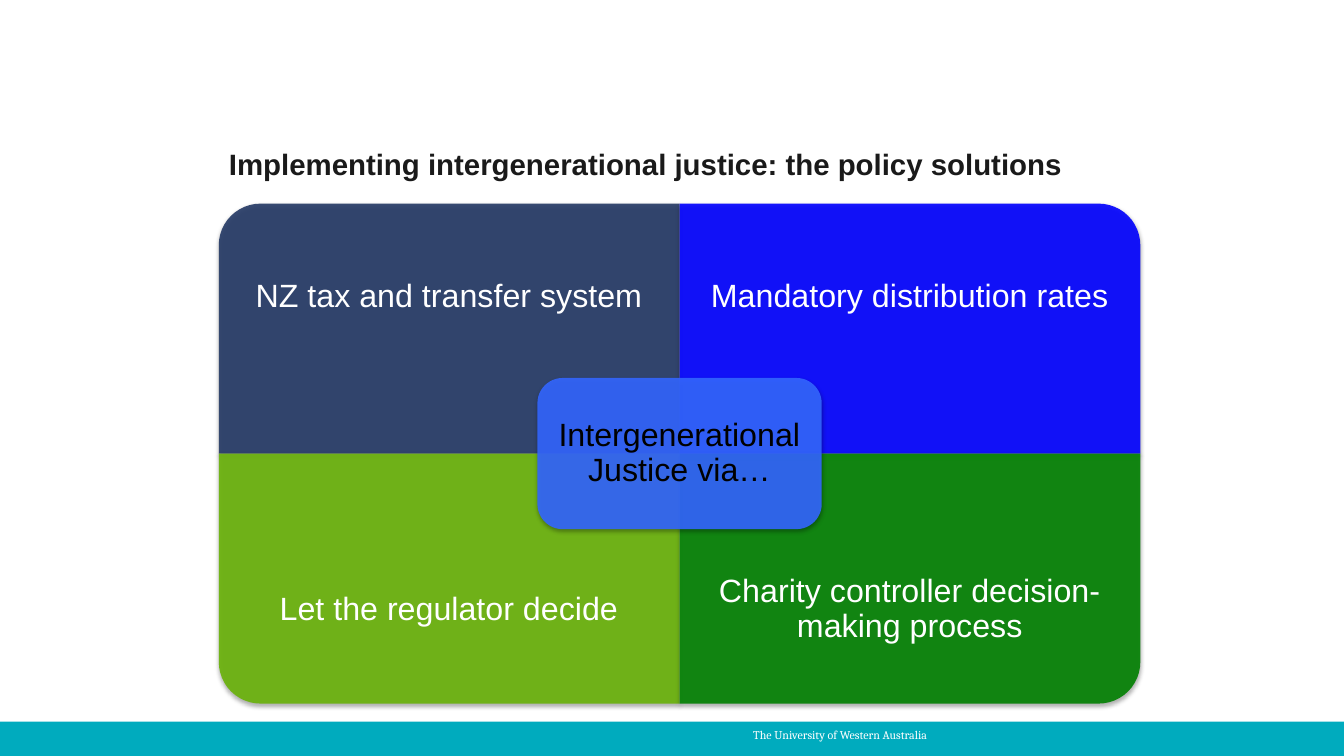
import pptx
import pptx.util
import pptx.dml.color
import pptx.enum.shapes
import pptx.enum.text
import pptx.oxml
import pptx.oxml.ns

Inches, Pt = pptx.util.Inches, pptx.util.Pt
RGBColor = pptx.dml.color.RGBColor
SHAPE = pptx.enum.shapes.MSO_SHAPE
ALIGN = pptx.enum.text.PP_ALIGN
ANCHOR = pptx.enum.text.MSO_ANCHOR

TEAL = RGBColor(0x00, 0xAB, 0xBE)
NAVY = RGBColor(0x24, 0x39, 0x65)
BLUE = RGBColor(0x00, 0x00, 0xFF)
LIME = RGBColor(0x69, 0xB2, 0x08)
GREEN = RGBColor(0x00, 0x80, 0x00)
SKY = RGBColor(0x33, 0x66, 0xFF)
INK = RGBColor(0x1A, 0x1A, 0x1A)
BLACK = RGBColor(0x00, 0x00, 0x00)
WHITE = RGBColor(0xFF, 0xFF, 0xFF)

TITLE = "Implementing intergenerational justice: the policy solutions"
FOOTER = "The University of Western Australia"
HUB = "Intergenerational Justice via…"
# text, column, row, fill, rotation that turns the round corner outwards
QUADRANTS = [
    ("NZ tax and transfer system", 0, 0, NAVY, 270),
    ("Mandatory distribution rates", 1, 0, BLUE, 0),
    ("Let the regulator decide", 0, 1, LIME, 180),
    ("Charity controller decision-making process", 1, 1, GREEN, 90),
]

WIDTH, HEIGHT = 13.33, 7.5
LEFT, TOP = 2.17, 2.02
QUAD_W, QUAD_H = 4.57, 2.48
LABEL_H = QUAD_H * 0.75
HUB_W, HUB_H = 2.82, 1.5
HUB_PAD = 0.07
BAR_H = 0.34


def box(x, y, w, h):
    return [Inches(v) for v in (x, y, w, h)]


def write(tf, text, size, color, font="Arial", bold=False, align=ALIGN.LEFT,
          inset=0.1, anchor=ANCHOR.MIDDLE):
    tf.word_wrap = True
    tf.auto_size = pptx.enum.text.MSO_AUTO_SIZE.NONE
    tf.vertical_anchor = anchor
    tf.margin_left = tf.margin_right = Inches(inset)
    tf.margin_top = tf.margin_bottom = Inches(inset)
    p = tf.paragraphs[0]
    p.alignment = align
    r = p.add_run()
    r.text = text
    r.font.size, r.font.name, r.font.bold = Pt(size), font, bold
    r.font.color.rgb = color
    return p


def add_tile(s, kind, color, frame):
    """Add a slightly transparent tile with a soft shadow below it."""
    sp = s.shapes.add_shape(kind, *box(*frame))
    sp.fill.solid()
    sp.fill.fore_color.rgb = color
    sp.line.fill.background()
    ns = pptx.oxml.ns.nsdecls("a")
    fill_color = sp._element.spPr.find(".//" + pptx.oxml.ns.qn("a:srgbClr"))
    fill_color.append(pptx.oxml.parse_xml(f'<a:alpha {ns} val="90000"/>'))
    sp._element.spPr.append(pptx.oxml.parse_xml(
        f'<a:effectLst {ns}><a:outerShdw blurRad="{Pt(3.1)}" dist="{Pt(1.8)}" '
        'dir="5400000" rotWithShape="0"><a:srgbClr val="000000">'
        '<a:alpha val="35000"/></a:srgbClr></a:outerShdw></a:effectLst>'))
    return sp


def add_label(s, text, color, frame, inset):
    tf = s.shapes.add_textbox(*box(*frame)).text_frame
    p = write(tf, text, 23, color, align=ALIGN.CENTER, inset=inset)
    p.line_spacing = 0.9


def add_quadrant(s, text, col, row, color, rotation):
    x, y = LEFT + col * QUAD_W, TOP + row * QUAD_H
    w, h = (QUAD_H, QUAD_W) if rotation % 180 else (QUAD_W, QUAD_H)
    frame = (x + (QUAD_W - w) / 2, y + (QUAD_H - h) / 2, w, h)
    add_tile(s, SHAPE.ROUND_1_RECTANGLE, color, frame).rotation = rotation
    label_y = y + row * (QUAD_H - LABEL_H)
    add_label(s, text, WHITE, (x, label_y, QUAD_W, LABEL_H), 0.18)


def add_hub(s):
    x, y = LEFT + QUAD_W - HUB_W / 2, TOP + QUAD_H - HUB_H / 2
    add_tile(s, SHAPE.ROUNDED_RECTANGLE, SKY, (x, y, HUB_W, HUB_H))
    inner = (x + HUB_PAD, y + HUB_PAD, HUB_W - 2 * HUB_PAD, HUB_H - 2 * HUB_PAD)
    add_label(s, HUB, BLACK, inner, 0.1)


def add_footer(s):
    sp = s.shapes.add_shape(SHAPE.RECTANGLE,
                            *box(0, HEIGHT - BAR_H, WIDTH, BAR_H))
    sp.shadow.inherit = False
    sp.fill.solid()
    sp.fill.fore_color.rgb = TEAL
    sp.line.fill.background()
    tf = sp.text_frame
    write(tf, FOOTER, 8.5, WHITE, font="Cambria", anchor=ANCHOR.TOP)
    tf.margin_left = Inches(7.47)
    tf.margin_top = tf.margin_bottom = Inches(0.06)


def main():
    prs = pptx.Presentation()
    prs.slide_width, prs.slide_height = Inches(WIDTH), Inches(HEIGHT)
    s = prs.slides.add_slide(prs.slide_layouts.get_by_name("Title Only"))
    add_footer(s)
    title = s.shapes.title
    title.left, title.top, title.width, title.height = box(LEFT, 1.39, 9, 0.47)
    write(title.text_frame, TITLE, 21, INK, bold=True)
    for quadrant in QUADRANTS:
        add_quadrant(s, *quadrant)
    add_hub(s)
    prs.save("out.pptx")


if __name__ == "__main__":
    main()
